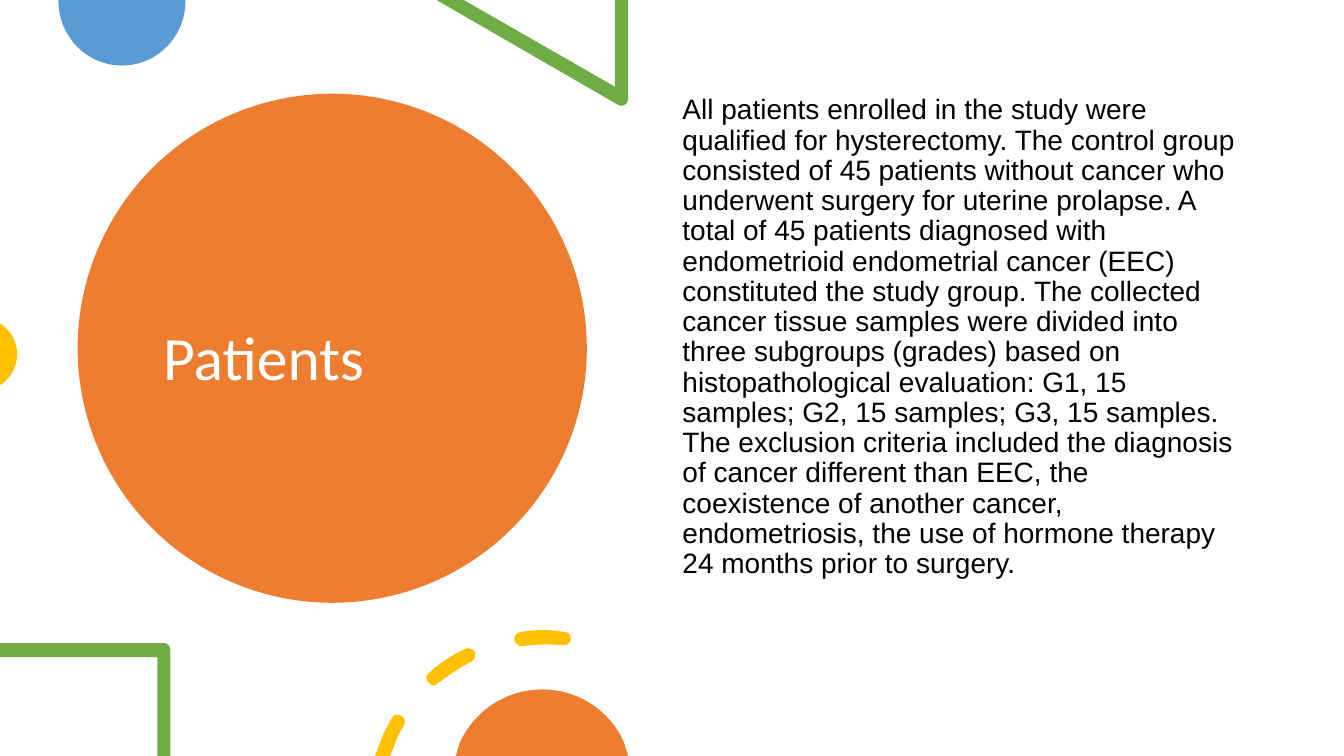
from pptx import Presentation
from pptx.dml.color import RGBColor
from pptx.enum.shapes import MSO_SHAPE
from pptx.enum.text import MSO_ANCHOR
from pptx.oxml.ns import qn
from pptx.util import Inches, Pt

COLORS = {
    "orange": "ED7D31", "blue": "5B9BD5", "green": "70AD47",
    "gold": "FFC000", "white": "FFFFFF", "black": "000000",
}

BODY = (
    "All patients enrolled in the study were qualified for hysterectomy. "
    "The control group consisted of 45 patients without cancer who underwent "
    "surgery for uterine prolapse. A total of 45 patients diagnosed with "
    "endometrioid endometrial cancer (EEC) constituted the study group. "
    "The collected cancer tissue samples were divided into three subgroups "
    "(grades) based on histopathological evaluation: G1, 15 samples; "
    "G2, 15 samples; G3, 15 samples. The exclusion criteria included the "
    "diagnosis of cancer different than EEC, the coexistence of another "
    "cancer, endometriosis, the use of hormone therapy 24 months prior to "
    "surgery."
)

DISC = [[(1.84, 0), (0.58, 0), (0.58, 0.01),
         (0.58, 0.36, 0.86, 0.65, 1.21, 0.65),
         (1.56, 0.65, 1.84, 0.36, 1.84, 0.01)]]
WEDGE = [[(6.23, 0), (6.1, 0), (6.1, 0.86), (4.6, 0), (4.33, 0), (6.13, 1.04),
          (6.14, 1.05, 6.15, 1.05, 6.16, 1.05),
          (6.2, 1.05, 6.23, 1.02, 6.23, 0.98)]]
EDGE = [[(0, 3.21), (0, 3.82), (0.02, 3.81),
         (0.11, 3.74, 0.17, 3.64, 0.17, 3.51),
         (0.17, 3.39, 0.11, 3.29, 0.02, 3.22)]]
FRAME = [[(1.63, 6.38), (0, 6.38), (0, 6.52), (1.56, 6.52), (1.56, 7.5),
          (1.69, 7.5), (1.69, 6.45), (1.69, 6.41, 1.66, 6.38, 1.63, 6.38)]]
DASHES = [
    [(3.95, 7.09), (3.93, 7.08, 3.9, 7.1, 3.89, 7.12),
     (3.85, 7.18, 3.82, 7.25, 3.79, 7.31), (3.72, 7.5), (3.87, 7.5),
     (3.92, 7.37), (3.94, 7.31, 3.97, 7.25, 4.01, 7.19),
     (4.02, 7.16, 4.01, 7.11, 3.98, 7.1),
     (3.97, 7.09, 3.96, 7.09, 3.95, 7.09)],
    [(4.64, 6.43), (4.63, 6.43, 4.62, 6.43, 4.61, 6.44),
     (4.48, 6.5, 4.36, 6.58, 4.25, 6.68),
     (4.22, 6.7, 4.22, 6.75, 4.25, 6.77),
     (4.26, 6.79, 4.28, 6.8, 4.3, 6.8), (4.3, 6.8),
     (4.32, 6.8, 4.33, 6.79, 4.34, 6.78),
     (4.45, 6.7, 4.56, 6.62, 4.68, 6.56),
     (4.71, 6.54, 4.72, 6.5, 4.71, 6.47),
     (4.69, 6.44, 4.67, 6.43, 4.64, 6.43)],
    [(5.38, 6.25), (5.31, 6.25, 5.24, 6.26, 5.16, 6.27),
     (5.13, 6.27, 5.1, 6.31, 5.1, 6.35),
     (5.11, 6.38, 5.14, 6.41, 5.17, 6.41),
     (5.18, 6.41, 5.18, 6.41, 5.18, 6.41),
     (5.32, 6.39, 5.45, 6.39, 5.58, 6.4),
     (5.62, 6.41, 5.65, 6.38, 5.66, 6.35),
     (5.67, 6.31, 5.64, 6.27, 5.6, 6.27),
     (5.6, 6.27, 5.6, 6.27, 5.6, 6.27),
     (5.53, 6.26, 5.45, 6.25, 5.38, 6.25)],
]
DOME = [[(5.38, 6.84), (5.01, 6.84, 4.7, 7.06, 4.56, 7.37), (4.52, 7.5),
         (6.23, 7.5), (6.19, 7.37), (6.06, 7.06, 5.74, 6.84, 5.38, 6.84)]]


def paint(shape, color):
    """Give a shape a flat fill without line or shadow."""
    shape.shadow.inherit = False
    shape.fill.solid()
    shape.fill.fore_color.rgb = RGBColor.from_string(COLORS[color])
    shape.line.fill.background()


def trace(outline):
    """List all points of an outline, curve handles included."""
    return [(Inches(item[at]), Inches(item[at + 1]))
            for item in outline for at in range(0, len(item), 2)]


def bend(shape, outlines):
    """Join each three segments that stand for a curve into a cubic one."""
    lines = iter(list(shape.element.iter(qn("a:lnTo"))))
    for outline in outlines:
        for item in outline[1:]:
            line = next(lines)
            if len(item) == 6:
                curve = line.makeelement(qn("a:cubicBezTo"))
                line.addprevious(curve)
                for part in (line, next(lines), next(lines)):
                    curve.append(part[0])
                    part.getparent().remove(part)


def add_form(slide, outlines, color):
    """Draw closed outlines as one filled freeform."""
    first, *others = [trace(outline) for outline in outlines]
    form = slide.shapes.build_freeform(*first[0])
    form.add_line_segments(first[1:])
    for points in others:
        form.move_to(*points[0])
        form.add_line_segments(points[1:])
    shape = form.convert_to_shape()
    bend(shape, outlines)
    paint(shape, color)


def add_text(slide, box, text, font, size, color, anchor):
    """Place a wrapped text box with one paragraph."""
    frame = slide.shapes.add_textbox(*map(Inches, box)).text_frame
    frame.word_wrap = True
    frame.vertical_anchor = anchor
    frame.text = text
    para = frame.paragraphs[0]
    para.line_spacing = 0.9
    style = para.runs[0].font
    style.name = font
    style.size = Pt(size)
    style.color.rgb = RGBColor.from_string(COLORS[color])


def main():
    """Build and save the slide."""
    deck = Presentation()
    deck.slide_width, deck.slide_height = Inches(13.33), Inches(7.5)
    slide = deck.slides.add_slide(deck.slide_layouts[6])
    circle = slide.shapes.add_shape(
        MSO_SHAPE.OVAL, *map(Inches, (0.77, 0.93, 5.05, 5.05)))
    paint(circle, "orange")
    add_text(slide, (1.52, 1.35, 3.54, 4.45), "Patients", "Calibri", 44,
             "white", MSO_ANCHOR.MIDDLE)
    for outlines, color in ((DISC, "blue"), (WEDGE, "green"), (EDGE, "gold")):
        add_form(slide, outlines, color)
    add_text(slide, (6.67, 0.9, 5.75, 5.35), BODY, "Arial", 20,
             "black", MSO_ANCHOR.TOP)
    for outlines, color in ((FRAME, "green"), (DASHES, "gold"), (DOME, "orange")):
        add_form(slide, outlines, color)
    deck.save("out.pptx")


if __name__ == "__main__":
    main()
